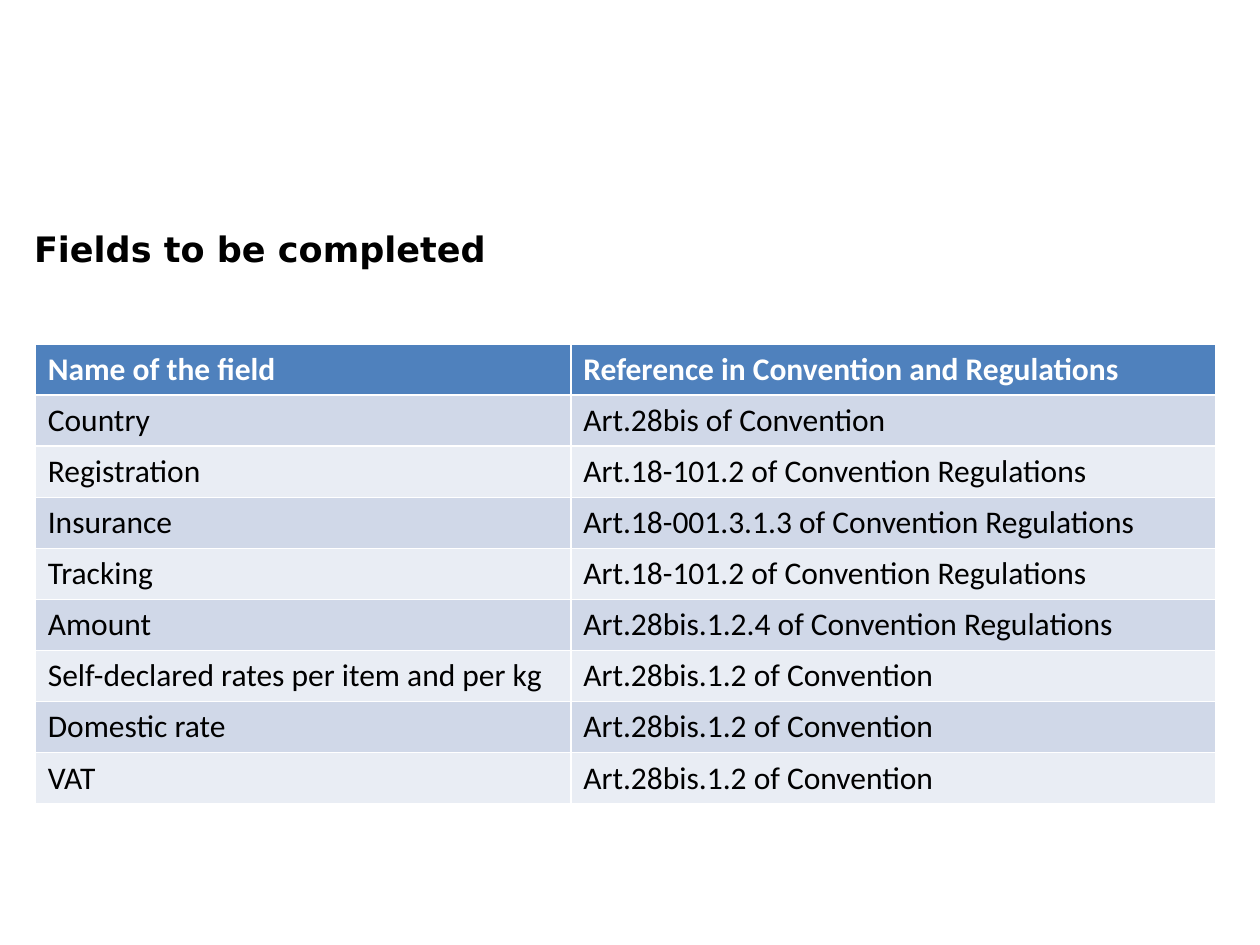
import dataclasses

import pptx
import pptx.dml.color
import pptx.enum.text
import pptx.util
from pptx.util import Inches


@dataclasses.dataclass(frozen=True)
class Theme:
    title_font: str = "DejaVu Sans"
    table_font: str = "Calibri"
    title_size: int = 20
    table_size: int = 18
    text: str = "000000"
    header_text: str = "FFFFFF"
    header_fill: str = "4F81BD"
    band_fills: tuple = ("D0D8E8", "E9EDF4")


THEME = Theme()

FIELDS = [
    ("Name of the field", "Reference in Convention and Regulations"),
    ("Country", "Art.28bis of Convention"),
    ("Registration", "Art.18-101.2 of Convention Regulations"),
    ("Insurance", "Art.18-001.3.1.3 of Convention Regulations"),
    ("Tracking", "Art.18-101.2 of Convention Regulations"),
    ("Amount", "Art.28bis.1.2.4 of Convention Regulations"),
    ("Self-declared rates per item and per kg", "Art.28bis.1.2 of Convention"),
    ("Domestic rate", "Art.28bis.1.2 of Convention"),
    ("VAT", "Art.28bis.1.2 of Convention"),
]


def color(value):
    return pptx.dml.color.RGBColor.from_string(value)


def set_font(para, name, size, value, bold):
    para.font.name = name
    para.font.size = pptx.util.Pt(size)
    para.font.color.rgb = color(value)
    para.font.bold = bold


def place_title(page, text, left, top, width, height):
    title = page.shapes.title
    title.left, title.top, title.width, title.height = left, top, width, height
    frame = title.text_frame
    frame.text = text
    frame.word_wrap = True
    frame.auto_size = pptx.enum.text.MSO_AUTO_SIZE.NONE
    frame.vertical_anchor = pptx.enum.text.MSO_ANCHOR.MIDDLE
    para = frame.paragraphs[0]
    para.alignment = pptx.enum.text.PP_ALIGN.LEFT
    set_font(para, THEME.title_font, THEME.title_size, THEME.text, True)


def place_table(page, rows, column_widths, left, top, width, height):
    table = page.shapes.add_table(
        len(rows), len(column_widths), left, top, width, height
    ).table
    for column, column_width in zip(table.columns, column_widths):
        column.width = column_width
    for row_index, texts in enumerate(rows):
        header = row_index == 0
        fill = THEME.header_fill if header else THEME.band_fills[(row_index - 1) % 2]
        text_color = THEME.header_text if header else THEME.text
        for column_index, text in enumerate(texts):
            cell = table.cell(row_index, column_index)
            cell.text = text
            cell.fill.solid()
            cell.fill.fore_color.rgb = color(fill)
            para = cell.text_frame.paragraphs[0]
            set_font(para, THEME.table_font, THEME.table_size, text_color, header)


def main():
    deck = pptx.Presentation()
    deck.slide_width, deck.slide_height = Inches(10), Inches(7.5)
    page = deck.slides.add_slide(deck.slide_layouts.get_by_name("Title Only"))
    place_title(
        page, "Fields to be completed",
        Inches(0.17), Inches(1.75), Inches(9.17), Inches(0.44),
    )
    place_table(
        page, FIELDS, (Inches(4.25), Inches(5.12)),
        Inches(0.28), Inches(2.73), Inches(9.37), Inches(3.65),
    )
    deck.save("out.pptx")


if __name__ == "__main__":
    main()
